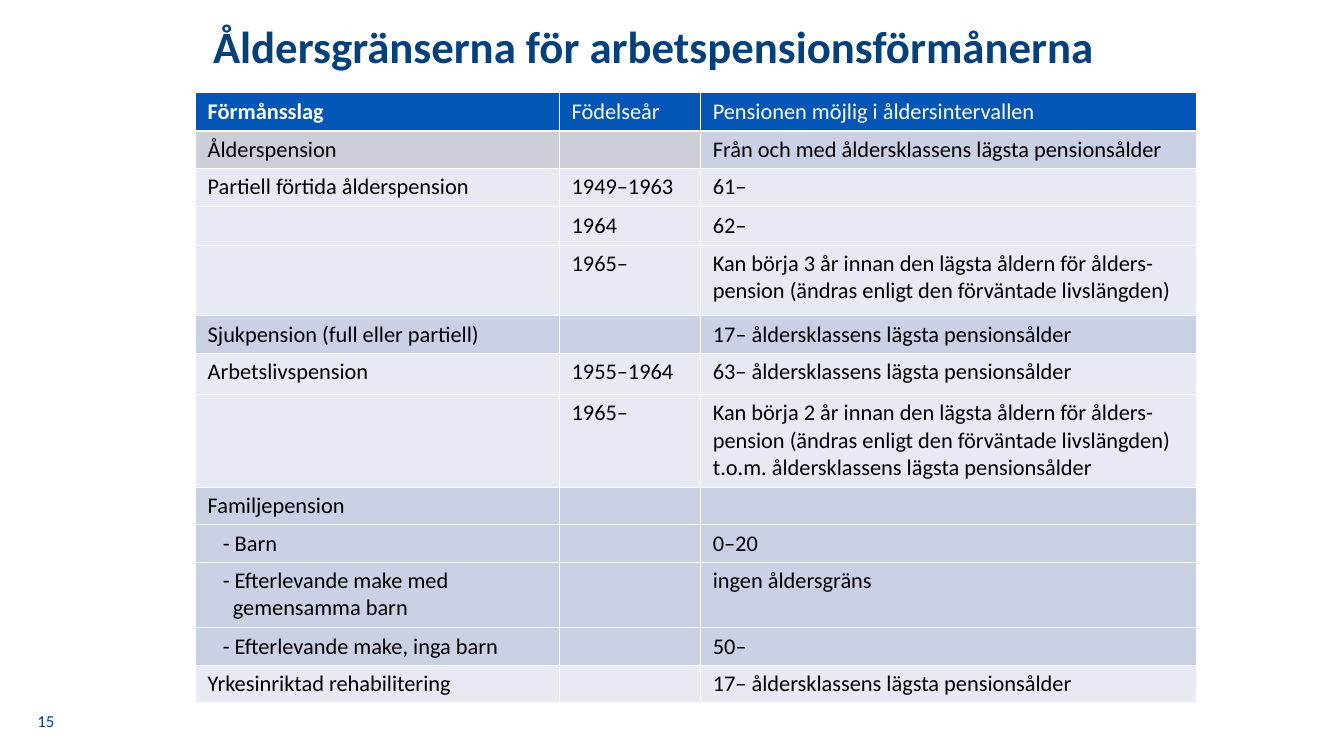
from lxml.etree import SubElement
from pptx import Presentation
from pptx.dml.color import RGBColor
from pptx.enum.text import MSO_ANCHOR, PP_ALIGN
from pptx.oxml.ns import qn
from pptx.util import Inches, Pt

NAVY, HEADER_BLUE, WHITE, BLACK = "03407C", "0356B5", "FFFFFF", "000000"
GREY, MID, LIGHT = "CCCFD7", "CBD1E5", "E7E9F3"
COLUMN_WIDTHS = [3.61, 1.4, 4.92]
BENEFITS = [
    (0.38, HEADER_BLUE, ("Förmånsslag", "Födelseår", "Pensionen möjlig i åldersintervallen")),
    (0.37, MID, ("Ålderspension", "", "Från och med åldersklassens lägsta pensionsålder")),
    (0.38, LIGHT, ("Partiell förtida ålderspension", "1949–1963", "61–")),
    (0.38, LIGHT, ("", "1964", "62–")),
    (0.7, LIGHT, ("", "1965–", "Kan börja 3 år innan den lägsta åldern för ålders-pension "
                  "(ändras enligt den förväntade livslängden)")),
    (0.36, MID, ("Sjukpension (full eller partiell)", "", "17– åldersklassens lägsta pensionsålder")),
    (0.41, LIGHT, ("Arbetslivspension", "1955–1964", "63– åldersklassens lägsta pensionsålder")),
    (0.92, LIGHT, ("", "1965–", "Kan börja 2 år innan den lägsta åldern för ålders-pension "
                   "(ändras enligt den förväntade livslängden) "
                   "t.o.m. åldersklassens lägsta pensionsålder")),
    (0.37, MID, ("Familjepension", "", "")),
    (0.37, MID, ("- Barn", "", "0–20")),
    (0.65, MID, ("- Efterlevande make med\vgemensamma barn", "", "ingen åldersgräns")),
    (0.37, MID, ("- Efterlevande make, inga barn", "", "50–")),
    (0.37, LIGHT, ("Yrkesinriktad rehabilitering", "", "17– åldersklassens lägsta pensionsålder")),
]


def color(hex_code):
    """Turn a hex string into a colour."""
    return RGBColor.from_string(hex_code)


def format_text(paragraph, size, hex_code, bold=False):
    """Set the font of a whole paragraph."""
    font = paragraph.font
    font.name, font.size, font.bold = "Calibri", Pt(size), bold
    font.color.rgb = color(hex_code)


def add_borders(cell):
    """Draw white rules around a cell, heavier across than down."""
    properties = cell._tc.get_or_add_tcPr()
    for position, (side, width) in enumerate([("lnL", 0.75), ("lnR", 0.75), ("lnT", 1), ("lnB", 1)]):
        rule = properties.makeelement(qn(f"a:{side}"), {"w": str(Pt(width))})
        SubElement(SubElement(rule, qn("a:solidFill")), qn("a:srgbClr"), val=WHITE)
        properties.insert(position, rule)


def fill_cell(cell, text, fill, is_header, bold):
    """Write and style one table cell."""
    cell.text = text
    cell.fill.solid()
    cell.fill.fore_color.rgb = color(fill)
    cell.margin_left, cell.margin_right = Inches(0.12), Inches(0)
    cell.margin_top = cell.margin_bottom = Inches(0.05 if text else 0)
    cell.vertical_anchor = MSO_ANCHOR.MIDDLE if is_header else MSO_ANCHOR.TOP
    add_borders(cell)
    paragraph = cell.text_frame.paragraphs[0]
    if text.startswith("- "):
        indents = paragraph._p.get_or_add_pPr()
        indents.set("marL", str(Inches(0.25)))
        indents.set("indent", str(Inches(-0.1)))
    format_text(paragraph, 16, WHITE if is_header else BLACK, bold)


def add_title(slide, left, top, width, height):
    """Place the slide title in its placeholder."""
    title = slide.shapes.title
    title.left, title.top, title.width, title.height = map(Inches, (left, top, width, height))
    title.text_frame.text = "Åldersgränserna för arbetspensionsförmånerna"
    title.text_frame.vertical_anchor = MSO_ANCHOR.MIDDLE
    heading = title.text_frame.paragraphs[0]
    heading.alignment, heading.line_spacing = PP_ALIGN.CENTER, 0.9
    format_text(heading, 32, NAVY, True)


def add_benefit_table(slide, left, top):
    """Build the table of age limits from its top left corner."""
    width, height = sum(COLUMN_WIDTHS), sum(benefit[0] for benefit in BENEFITS)
    table = slide.shapes.add_table(len(BENEFITS), len(COLUMN_WIDTHS), Inches(left), Inches(top),
                                   Inches(width), Inches(height)).table
    table.horz_banding = False
    for column, column_width in zip(table.columns, COLUMN_WIDTHS):
        column.width = Inches(column_width)
    for row, (row_height, row_fill, texts) in enumerate(BENEFITS):
        table.rows[row].height = Inches(row_height)
        for column, text in enumerate(texts):
            fill = GREY if row == 1 and column < 2 else row_fill
            fill_cell(table.cell(row, column), text, fill, row == 0, row == column == 0)


def add_page_number(slide, left, top, width, height):
    """Place the page number in the given box."""
    frame = slide.shapes.add_textbox(*map(Inches, (left, top, width, height))).text_frame
    frame.word_wrap = True
    frame.vertical_anchor = MSO_ANCHOR.MIDDLE
    frame.text = "15"
    number = frame.paragraphs[0]
    number.alignment = PP_ALIGN.CENTER
    format_text(number, 12, NAVY)


def main():
    """Build and save the slide."""
    presentation = Presentation()
    presentation.slide_width, presentation.slide_height = Inches(13.33), Inches(7.5)
    slide = presentation.slides.add_slide(presentation.slide_layouts.get_by_name("Title Only"))
    add_title(slide, 0, 0.19, 12.97, 0.6)
    add_benefit_table(slide, 1.94, 0.92)
    add_page_number(slide, 0.2, 6.95, 0.51, 0.4)
    presentation.save("out.pptx")


if __name__ == "__main__":
    main()
